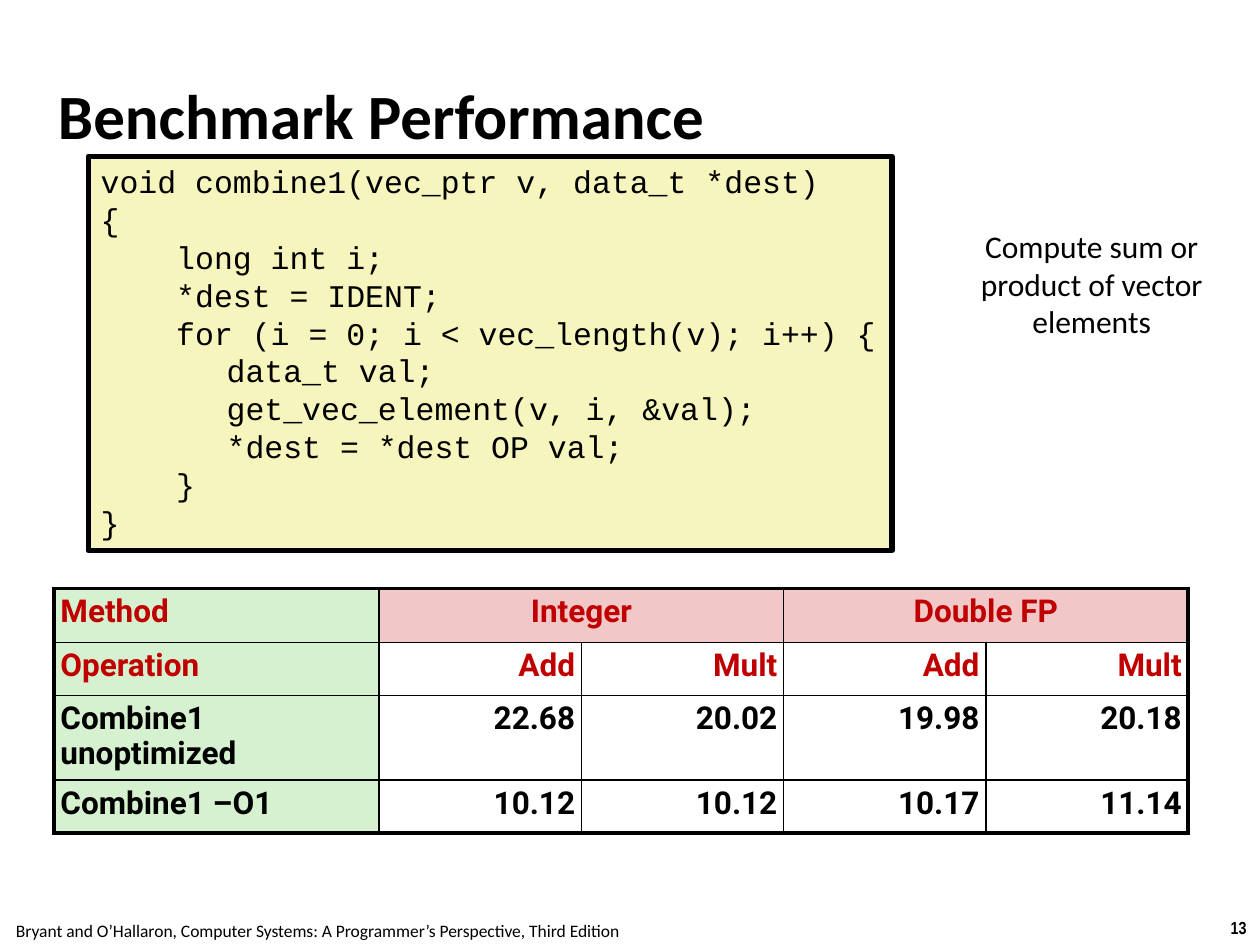
import dataclasses

import pptx
import pptx.dml.color
import pptx.enum.shapes
import pptx.enum.text
import pptx.oxml
import pptx.oxml.ns
import pptx.util
from lxml import etree

Inches = pptx.util.Inches
Pt = pptx.util.Pt
ALIGN = pptx.enum.text.PP_ALIGN
ANCHOR = pptx.enum.text.MSO_ANCHOR
AUTO = pptx.enum.text.MSO_AUTO_SIZE


@dataclasses.dataclass(frozen=True)
class Theme:
    ink: str = "000000"
    accent: str = "C00000"
    code_fill: str = "F6F5BD"
    label_fill: str = "D5F1CF"
    group_fill: str = "F1C7C7"
    body_font: str = "Calibri"
    code_font: str = "Courier New"
    table_font: str = "Roboto"
    number_font: str = "Arial Narrow"
    title_size: int = 36
    body_size: int = 18
    footer_size: int = 10
    code_line: float = 3
    outer_line: float = 2.25
    inner_line: float = 1


THEME = Theme()

# Each line of code with its indent in inches
CODE = [
    (0, "void combine1(vec_ptr v, data_t *dest)"),
    (0, "{"),
    (0.6, "long int i;"),
    (0.6, "*dest = IDENT;"),
    (0.6, "for (i = 0; i < vec_length(v); i++) {"),
    (1, "data_t val;"),
    (1, "get_vec_element(v, i, &val);"),
    (1, "*dest = *dest OP val;"),
    (0.6, "}"),
    (0, "}"),
]

# None continues the merged cell on its left
RESULTS = [
    ["Method", "Integer", None, "Double FP", None],
    ["Operation", "Add", "Mult", "Add", "Mult"],
    ["Combine1 unoptimized", "22.68", "20.02", "19.98", "20.18"],
    ["Combine1 –O1", "10.12", "10.12", "10.17", "11.14"],
]
ROW_HEIGHTS = [0.43, 0.42, 0.67, 0.42]
HEADER_ROWS = 2
LABEL_WIDTH = 2.58


def rgb(value):
    return pptx.dml.color.RGBColor.from_string(value)


def add_run(p, text, size, font=THEME.body_font, color=THEME.ink, bold=False):
    r = p.add_run()
    r.text = text
    r.font.size = Pt(size)
    r.font.name = font
    r.font.bold = bold
    r.font.color.rgb = rgb(color)


def set_title(slide, box, text):
    sp = slide.shapes.title
    sp.left, sp.top, sp.width, sp.height = map(Inches, box)
    tf = sp.text_frame
    tf.auto_size = AUTO.NONE
    tf.vertical_anchor = ANCHOR.MIDDLE
    tf.margin_left = tf.margin_right = tf.margin_top = tf.margin_bottom = Inches(0.04)
    p = tf.paragraphs[0]
    p.alignment = ALIGN.LEFT
    add_run(p, text, THEME.title_size, bold=True)


def add_label(slide, box, text, size, wrap=False, **style):
    """Centred text box."""
    tf = slide.shapes.add_textbox(*map(Inches, box)).text_frame
    tf.word_wrap = wrap
    p = tf.paragraphs[0]
    p.alignment = ALIGN.CENTER
    add_run(p, text, size, **style)


def add_code(slide, box, lines):
    sp = slide.shapes.add_shape(pptx.enum.shapes.MSO_SHAPE.RECTANGLE, *map(Inches, box))
    sp.shadow.inherit = False
    sp.fill.solid()
    sp.fill.fore_color.rgb = rgb(THEME.code_fill)
    sp.line.color.rgb = rgb(THEME.ink)
    sp.line.width = Pt(THEME.code_line)
    tf = sp.text_frame
    tf.word_wrap = False
    tf.vertical_anchor = ANCHOR.TOP
    for i, (indent, text) in enumerate(lines):
        p = tf.add_paragraph() if i else tf.paragraphs[0]
        p.alignment = ALIGN.LEFT
        p._p.get_or_add_pPr().set("marL", str(Inches(indent)))
        add_run(p, text, THEME.body_size, THEME.code_font)


def set_borders(cell, outer_sides):
    """Thick lines on the table's outer sides, thin ones elsewhere."""
    tc_pr = cell._tc.get_or_add_tcPr()
    qn = pptx.oxml.ns.qn
    for side in "LRTB":
        width = THEME.outer_line if side in outer_sides else THEME.inner_line
        ln = etree.SubElement(tc_pr, qn(f"a:ln{side}"), w=str(Pt(width)))
        fill = etree.SubElement(ln, qn("a:solidFill"))
        etree.SubElement(fill, qn("a:srgbClr"), val=THEME.ink)


def format_cell(cell, row, col, span, n_rows, n_cols):
    edges = {"L": col == 0, "R": col + span == n_cols,
             "T": row == 0, "B": row == n_rows - 1}
    set_borders(cell, [side for side, outer in edges.items() if outer])
    if col and row:
        cell.fill.background()
    else:
        cell.fill.solid()
        cell.fill.fore_color.rgb = rgb(THEME.group_fill if col else THEME.label_fill)
    cell.margin_left = cell.margin_right = Inches(0.05)
    cell.margin_top = cell.margin_bottom = Inches(0.05)


def add_results(slide, box, rows):
    n_rows, n_cols = len(rows), len(rows[0])
    table = slide.shapes.add_table(n_rows, n_cols, *map(Inches, box)).table
    table.first_row = table.horz_banding = False
    for col, column in enumerate(table.columns):
        column.width = Inches((box[2] - LABEL_WIDTH) / (n_cols - 1) if col else LABEL_WIDTH)
    for row, values in enumerate(rows):
        table.rows[row].height = Inches(ROW_HEIGHTS[row])
        for col, text in enumerate(values):
            cell = table.cell(row, col)
            span = 2 if None in values[col + 1:col + 2] else 1
            format_cell(cell, row, col, span, n_rows, n_cols)
            if text is None:
                continue
            if span > 1:
                cell.merge(table.cell(row, col + span - 1))
            p = cell.text_frame.paragraphs[0]
            p.line_spacing = 0.95
            if col:
                p.alignment = ALIGN.RIGHT if row else ALIGN.CENTER
            else:
                p.alignment = ALIGN.LEFT
            color = THEME.accent if row < HEADER_ROWS else THEME.ink
            add_run(p, text, THEME.body_size, THEME.table_font, color, bold=True)


def add_footer(slide, source, number):
    add_label(slide, (-0.02, 7.25, 5.08, 0.27), source, THEME.footer_size)
    add_label(slide, (9.66, 7.23, 0.34, 0.27), number, THEME.footer_size,
              font=THEME.number_font, bold=True)


def main():
    prs = pptx.Presentation()
    prs.slide_width, prs.slide_height = Inches(10), Inches(7.5)
    slide = prs.slides.add_slide(prs.slide_layouts.get_by_name("Title Only"))
    add_footer(slide, "Bryant and O’Hallaron, Computer Systems: "
               "A Programmer’s Perspective, Third Edition", "13")
    set_title(slide, (0.42, 0.28, 9.17, 1.25), "Benchmark Performance")
    add_code(slide, (0.7, 1.24, 6.38, 3.13), CODE)
    add_label(slide, (7.33, 1.75, 2.67, 1.01),
              "Compute sum or product of vector elements", THEME.body_size, wrap=True)
    add_results(slide, (0.43, 4.67, 9, sum(ROW_HEIGHTS)), RESULTS)
    prs.save("out.pptx")


if __name__ == "__main__":
    main()
